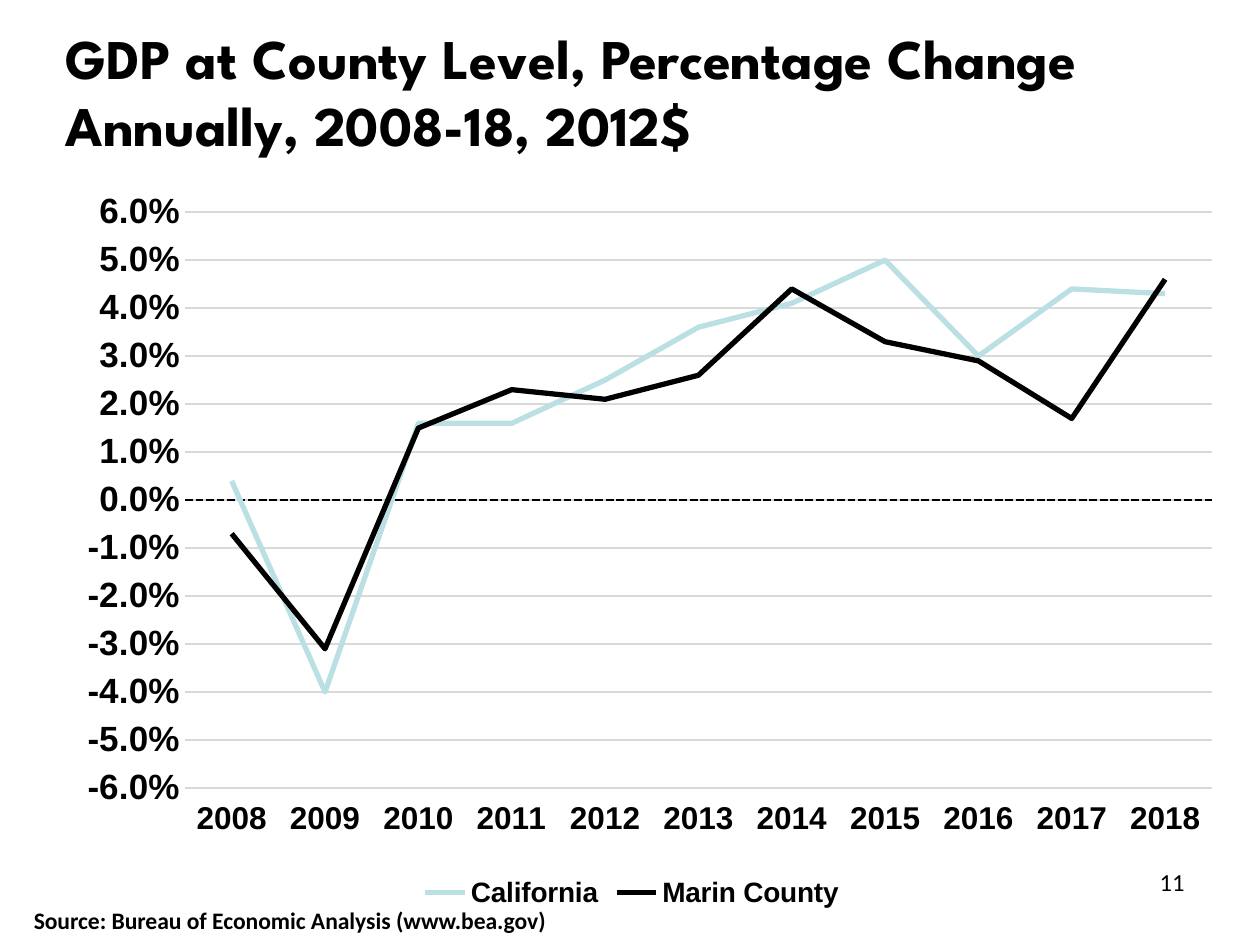
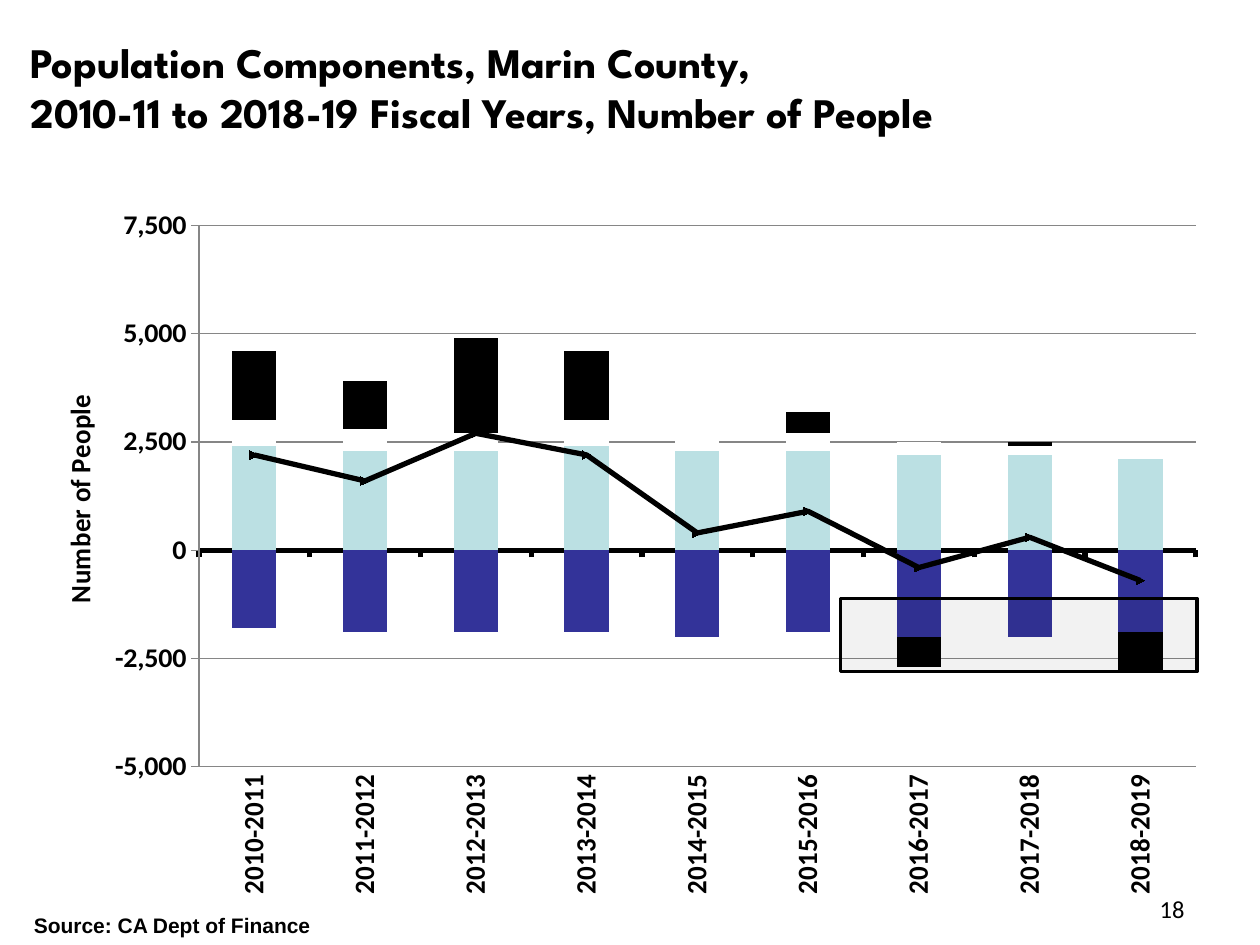
from copy import deepcopy
from dataclasses import dataclass

from pptx import Presentation
from pptx.chart.data import CategoryChartData
from pptx.dml.color import RGBColor
from pptx.enum.chart import XL_CHART_TYPE as ChartType
from pptx.enum.chart import XL_LEGEND_POSITION as LegendPosition
from pptx.enum.chart import XL_TICK_LABEL_POSITION as LabelPosition
from pptx.enum.chart import XL_TICK_MARK as TickMark
from pptx.enum.dml import MSO_LINE as LineDash
from pptx.enum.shapes import MSO_SHAPE as Preset
from pptx.enum.text import MSO_ANCHOR as Anchor
from pptx.enum.text import MSO_AUTO_SIZE as AutoSize
from pptx.enum.text import PP_ALIGN as Align
from pptx.oxml import parse_xml
from pptx.oxml.ns import nsdecls, qn
from pptx.util import Emu, Pt

EMU_PER_PX = 9144  # 100 px to the inch
TITLE_ONLY = 5


@dataclass(frozen=True)
class Theme:
    black: str = "000000"
    white: str = "FFFFFF"
    pale_teal: str = "BBE0E3"
    indigo: str = "333399"
    light_grid: str = "D9D9D9"
    dark_grid: str = "868686"
    title_font: str = "League Spartan"
    body_font: str = "Calibri"
    plain_font: str = "Arial"
    number_size: float = 14
    axis_size: float = 16
    legend_size: float = 16
    thin: float = 0.75
    thick: float = 3


def px(length):
    return Emu(length * EMU_PER_PX)


def box_of(box):
    return [px(length) for length in box]


def style_font(font, name, size, color, bold=True):
    font.name, font.size, font.bold = name, Pt(size), bold
    font.color.rgb = RGBColor.from_string(color)


def style_line(line, color, width):
    line.color.rgb = RGBColor.from_string(color)
    line.width = Pt(width)


def style_fill(fill, color):
    fill.solid()
    fill.fore_color.rgb = RGBColor.from_string(color)


def set_layout(parent, index, target="", **fractions):
    """Pin a chart part to fractions (x, y, w, h) of the chart area."""
    for layout in parent.findall(qn("c:layout")):
        parent.remove(layout)
    modes = "".join(f'<c:{key}Mode val="edge"/>' for key in "xy")
    values = "".join(f'<c:{key} val="{value}"/>' for key, value in fractions.items())
    parent.insert(index, parse_xml(
        f'<c:layout {nsdecls("c")}><c:manualLayout>{target}{modes}{values}'
        "</c:manualLayout></c:layout>"))


def move_last_series_to_line(chart):
    """Turn the last column series into a line on the same axes."""
    bars = chart.element.xpath(".//c:barChart")[0]
    series = bars.findall(qn("c:ser"))[-1]
    for invert in series.findall(qn("c:invertIfNegative")):
        series.remove(invert)
    line_chart = parse_xml(
        f'<c:lineChart {nsdecls("c")}><c:grouping val="standard"/>'
        '<c:varyColors val="0"/><c:marker val="1"/></c:lineChart>')
    line_chart.insert(2, series)
    for axis_id in bars.findall(qn("c:axId")):
        line_chart.append(deepcopy(axis_id))
    bars.addnext(line_chart)
    return chart.plots[1].series[0]


class Deck:
    def __init__(self, theme):
        self.theme = theme
        self.presentation = Presentation()
        self.presentation.slide_width = px(1000)
        self.presentation.slide_height = px(750)
        self.slide = None

    def add_slide(self, title, box, size):
        layout = self.presentation.slide_layouts[TITLE_ONLY]
        self.slide = self.presentation.slides.add_slide(layout)
        shape = self.slide.shapes.title
        shape.left, shape.top, shape.width, shape.height = box_of(box)
        frame = shape.text_frame
        frame.text = title
        frame.word_wrap = True
        frame.auto_size = AutoSize.NONE
        frame.vertical_anchor = Anchor.MIDDLE
        paragraph = frame.paragraphs[0]
        paragraph.alignment = Align.LEFT
        style_font(paragraph.font, self.theme.title_font, size, self.theme.black)

    def add_text(self, text, box, font, size, bold=True, align=Align.LEFT):
        frame = self.slide.shapes.add_textbox(*box_of(box)).text_frame
        frame.word_wrap = True
        paragraph = frame.paragraphs[0]
        paragraph.text = text
        paragraph.alignment = align
        style_font(paragraph.font, font, size, self.theme.black, bold)

    def add_number(self, number, top):
        self.add_text(str(number), (717, top, 233, 30), self.theme.body_font,
                      self.theme.number_size, bold=False, align=Align.RIGHT)

    def add_source(self, text, top, font, size):
        self.add_text(text, (17, top, 550, 30), font, size)

    def add_chart(self, kind, box, categories, series, number_format, font, size, plot):
        """Add a chart of (name, values) pairs; plot is its inner x, y, w, h."""
        data = CategoryChartData(number_format=number_format)
        data.categories = categories
        for name, values in series:
            data.add_series(name, values)
        chart = self.slide.shapes.add_chart(kind, *box_of(box), data).chart
        chart.has_title = chart.has_legend = False
        style_font(chart.font, font, size, self.theme.black)
        chart.plots[0].vary_by_categories = False
        chart.category_axis.tick_label_position = LabelPosition.LOW
        set_layout(chart.element.xpath(".//c:plotArea")[0], 0,
                   '<c:layoutTarget val="inner"/>', **dict(zip("xywh", plot)))
        return chart

    def style_axis(self, axis, font, size, ticks):
        style_font(axis.tick_labels.font, font, size, self.theme.black)
        axis.major_tick_mark = ticks
        axis.minor_tick_mark = TickMark.NONE

    def style_scale(self, axis, low, high, step, number_format, grid):
        axis.minimum_scale, axis.maximum_scale, axis.major_unit = low, high, step
        axis.tick_labels.number_format = number_format
        axis.tick_labels.number_format_is_linked = False
        axis.has_major_gridlines = True
        style_line(axis.major_gridlines.format.line, grid, self.theme.thin)

    def add_legend(self, chart, font):
        chart.has_legend = True
        chart.legend.position = LegendPosition.BOTTOM
        chart.legend.include_in_layout = False
        style_font(chart.legend.font, font, self.theme.legend_size, self.theme.black)

    def add_highlight(self, box, opacity):
        """Add an outlined rectangle whose fill has the given percentage of opacity."""
        shape = self.slide.shapes.add_shape(Preset.RECTANGLE, *box_of(box))
        shape.shadow.inherit = False
        style_fill(shape.fill, self.theme.black)
        color = shape.element.spPr.find(qn("a:solidFill"))[0]
        color.append(parse_xml(f'<a:alpha {nsdecls("a")} val="{opacity * 1000}"/>'))
        style_line(shape.line, self.theme.black, 2)


def build_gdp_slide(deck):
    theme = deck.theme
    font = theme.plain_font
    deck.add_slide("GDP at County Level, Percentage Change Annually, 2008-18, 2012$",
                   (42, 37, 900, 70), 32)
    deck.add_number(11, 683)
    growth = [
        ("California", (0.004, -0.04, 0.016, 0.016, 0.025, 0.036,
                        0.041, 0.05, 0.03, 0.044, 0.043)),
        ("Marin County", (-0.007, -0.031, 0.015, 0.023, 0.021, 0.026,
                          0.044, 0.033, 0.029, 0.017, 0.046)),
    ]
    years = [str(year) for year in range(2008, 2019)]
    chart = deck.add_chart(ChartType.LINE, (17, 150, 969, 575), years, growth, "0.0%",
                           font, 20, (0.134, 0.032, 0.841, 0.795))
    deck.style_axis(chart.category_axis, font, 18, TickMark.NONE)
    zero_line = chart.category_axis.format.line
    style_line(zero_line, theme.black, 1.5)
    zero_line.dash_style = LineDash.SQUARE_DOT
    deck.style_axis(chart.value_axis, font, 20, TickMark.NONE)
    deck.style_scale(chart.value_axis, -0.06, 0.06, 0.01, "0.0%", theme.light_grid)
    chart.value_axis.format.line.fill.background()
    for series, color in zip(chart.plots[0].series, (theme.pale_teal, theme.black)):
        series.smooth = False
        style_line(series.format.line, color, theme.thick)
    deck.add_legend(chart, font)
    deck.add_source("Source: Bureau of Economic Analysis (www.bea.gov)", 714,
                    theme.body_font, 13.5)


def build_population_slide(deck):
    theme = deck.theme
    font = theme.body_font
    deck.add_slide("Population Components, Marin County,\v"
                   "2010-11 to 2018-19 Fiscal Years, Number of People",
                   (14, 15, 967, 108), 24)
    bars = [
        (theme.pale_teal, (2400, 2300, 2300, 2400, 2300, 2300, 2200, 2200, 2100)),
        (theme.indigo, (-1800, -1900, -1900, -1900, -2000, -1900, -2000, -2000, -1900)),
        (theme.white, (600, 500, 400, 600, 300, 400, 300, 200, 200)),
        (theme.black, (1600, 1100, 2200, 1600, 0, 500, -700, 100, -900)),
    ]
    line_values = (2200, 1600, 2700, 2200, 400, 900, -400, 300, -700)
    unnamed = [("", values) for _, values in bars] + [("", line_values)]
    fiscal_years = [f"{year}-{year + 1}" for year in range(2010, 2019)]
    chart = deck.add_chart(ChartType.COLUMN_STACKED, (35, 123, 931, 587), fiscal_years,
                           unnamed, "#,##0", font, theme.axis_size,
                           (0.132, 0.099, 0.85, 0.76))
    chart.plots[0].gap_width, chart.plots[0].overlap = 150, 100

    line = move_last_series_to_line(chart)
    line.smooth = False
    style_line(line.format.line, theme.black, theme.thick)
    line.marker.size = 5
    style_fill(line.marker.format.fill, theme.black)
    for series, (color, _) in zip(chart.plots[0].series, bars):
        series.invert_if_negative = False
        style_fill(series.format.fill, color)
    # Without a name element the series carries no text at all.
    for name in chart.element.xpath(".//c:ser/c:tx"):
        name.getparent().remove(name)

    deck.style_axis(chart.category_axis, font, theme.axis_size, TickMark.OUTSIDE)
    style_line(chart.category_axis.format.line, theme.black, theme.thick)
    value_axis = chart.value_axis
    deck.style_axis(value_axis, font, theme.axis_size, TickMark.OUTSIDE)
    deck.style_scale(value_axis, -5000, 7500, 2500, "#,##0", theme.dark_grid)
    style_line(value_axis.format.line, theme.dark_grid, theme.thin)
    axis_title = value_axis.axis_title.text_frame
    axis_title.text = "Number of People"
    style_font(axis_title.paragraphs[0].font, font, theme.axis_size, theme.black)
    set_layout(chart.element.xpath(".//c:valAx/c:title")[0], 1, x=0.01, y=0.34)
    for body in chart.element.xpath(
            ".//c:catAx/c:txPr/a:bodyPr | .//c:valAx/c:title//a:bodyPr"):
        body.set("rot", "-5400000")
        body.set("vert", "horz")

    deck.add_number(18, 705)
    deck.add_source("Source: CA Dept of Finance", 719, theme.plain_font, 12)
    deck.add_highlight((667, 475, 283, 58), opacity=5)


def main():
    deck = Deck(Theme())
    build_gdp_slide(deck)
    build_population_slide(deck)
    deck.presentation.save("out.pptx")


if __name__ == "__main__":
    main()
